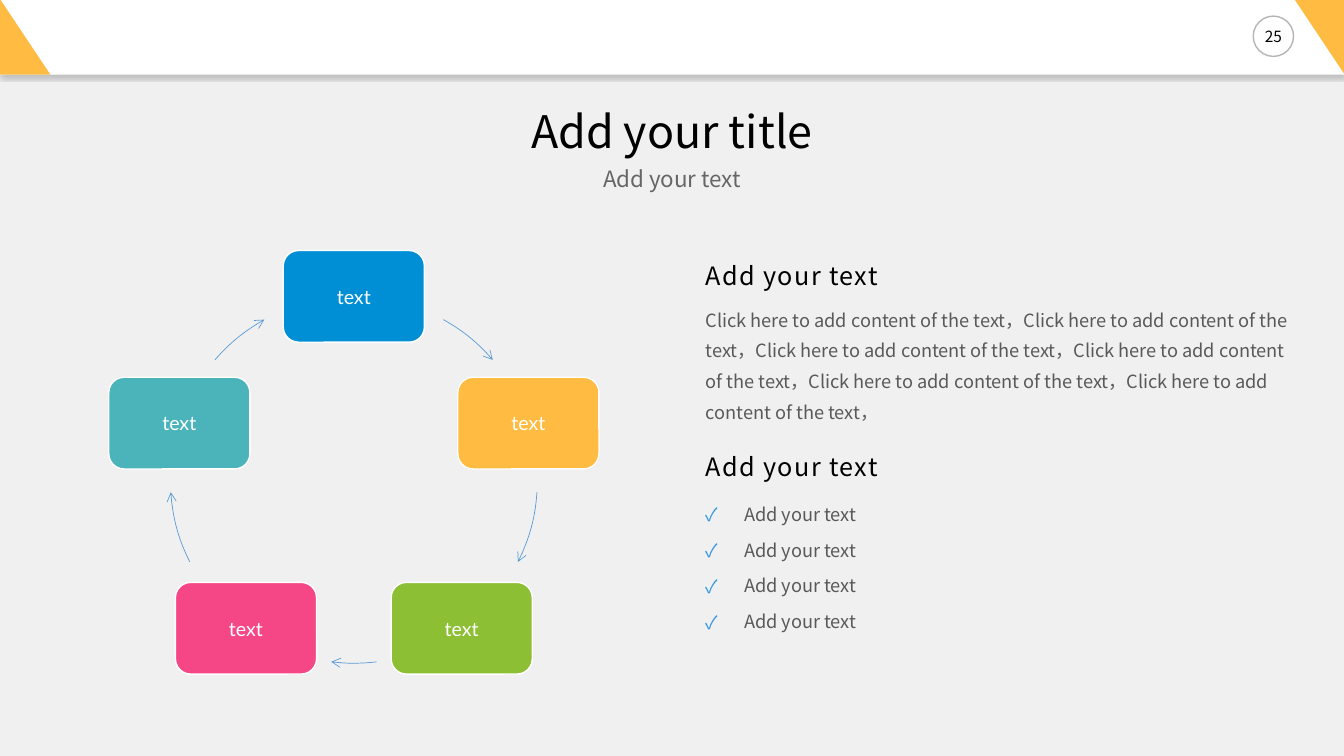
from math import cos, sin, radians
from lxml import etree
from pptx import Presentation
from pptx.dml.color import RGBColor
from pptx.enum.shapes import MSO_SHAPE as SHAPE
from pptx.enum.text import MSO_ANCHOR as ANCHOR, PP_ALIGN as ALIGN
from pptx.oxml.ns import qn
from pptx.util import Inches, Pt

WHITE = RGBColor(0xFF, 0xFF, 0xFF)
BLACK = RGBColor(0, 0, 0)
PAPER = RGBColor(0xF0, 0xF0, 0xF0)
INK = RGBColor(0x0D, 0x0D, 0x0D)
SUBTITLE_GREY = RGBColor(0x66, 0x66, 0x66)
BODY_GREY = RGBColor(0x59, 0x59, 0x59)
AMBER = RGBColor(0xFF, 0xBB, 0x42)
BLUE = RGBColor(0x00, 0x8F, 0xD5)
GREEN = RGBColor(0x8D, 0xBF, 0x34)
PINK = RGBColor(0xF5, 0x47, 0x85)
TEAL = RGBColor(0x4B, 0xB4, 0xBA)
ARROW_BLUE = RGBColor(0x5B, 0x9B, 0xD5)
CHECK_BLUE = RGBColor(0x34, 0x98, 0xDB)
FONT = "Noto Sans CJK JP"
CYCLE_FONT = "Lato"

TITLE = "Add your title"
SUBTITLE = "Add your text"
PAGE = "25"
CYCLE = [("text", BLUE), ("text", AMBER), ("text", GREEN), ("text", PINK), ("text", TEAL)]
ARCS = [(-60.8, -40.8), (3.9, 26.6), (82.9, 97.1), (153.4, 176.1), (220.8, 240.8)]
HEADINGS = [("Add your text", 2.62), ("Add your text", 4.51)]
BODY = "Click here to add content of the text，" * 6
CHECKS = ["Add your text"] * 4

CENTER_X, CENTER_Y, RADIUS = 3.51, 4.76, 1.82
BOX_W, BOX_H = 1.4, 0.91
COLUMN_X, COLUMN_W = 7, 5.83


def add_run(p, text, size, color, font=FONT, spacing=None):
    r = p.add_run()
    r.text = text
    r.font.size = Pt(size)
    r.font.name = font
    r.font.color.rgb = color
    etree.SubElement(r.font._element, qn("a:ea"), typeface=font)
    if spacing:
        r.font._element.set("spc", str(spacing))


def plain_frame(sp, anchor=ANCHOR.TOP):
    tf = sp.text_frame
    tf.word_wrap = True
    tf.margin_left = tf.margin_right = tf.margin_top = tf.margin_bottom = 0
    tf.vertical_anchor = anchor
    return tf


def add_box(s, x, y, w, h):
    return plain_frame(s.shapes.add_textbox(Inches(x), Inches(y), Inches(w), Inches(h)))


def add_preset(s, kind, x, y, w, h, fill, line=None):
    sp = s.shapes.add_shape(kind, Inches(x), Inches(y), Inches(w), Inches(h))
    sp.shadow.inherit = False
    sp.fill.solid()
    sp.fill.fore_color.rgb = fill
    if line is None:
        sp.line.fill.background()
    else:
        sp.line.color.rgb = line
        sp.line.width = Pt(1)
    return sp


def centre_text(sp, text, size, color, font):
    p = plain_frame(sp, ANCHOR.MIDDLE).paragraphs[0]
    p.alignment = ALIGN.CENTER
    add_run(p, text, size, color, font)


def add_header(s):
    bar = add_preset(s, SHAPE.RECTANGLE, -0.01, -0.01, 13.34, 0.75, WHITE)
    effects = bar._element.spPr.find(qn("a:effectLst"))
    shadow = etree.SubElement(effects, qn("a:outerShdw"), blurRad=str(Pt(3)),
                              dist=str(Pt(2)), dir="5400000", algn="t", rotWithShape="0")
    tint = etree.SubElement(shadow, qn("a:srgbClr"), val="000000")
    etree.SubElement(tint, qn("a:alpha"), val="20000")
    badge = add_preset(s, SHAPE.OVAL, 12.43, 0.16, 0.4, 0.4, WHITE, INK)
    ring = badge.line._ln.find(".//" + qn("a:srgbClr"))
    etree.SubElement(ring, qn("a:alpha"), val="30000")
    centre_text(badge, PAGE, 11, BLACK, FONT)
    for x, y, turn in ((0, -0.01, 0), (12.83, -0.02, 180)):
        corner = add_preset(s, SHAPE.RIGHT_TRIANGLE, x, y, 0.5, 0.75, AMBER)
        corner.rotation = turn


def on_circle(angle):
    a = radians(angle)
    return CENTER_X + RADIUS * cos(a), CENTER_Y + RADIUS * sin(a)


def add_arc(s, start, end):
    left, top = Inches(CENTER_X - RADIUS), Inches(CENTER_Y - RADIUS)
    right, bottom = Inches(CENTER_X + RADIUS), Inches(CENTER_Y + RADIUS)
    builder = s.shapes.build_freeform(left, top)
    builder.add_line_segments([(right, top), (right, bottom)], close=False)
    sp = builder.convert_to_shape()
    outline = sp._element.find(".//" + qn("a:path"))
    for step in list(outline):
        outline.remove(step)
    x, y = on_circle(start)
    move = etree.SubElement(outline, qn("a:moveTo"))
    etree.SubElement(move, qn("a:pt"), x=str(Inches(x) - left), y=str(Inches(y) - top))
    radius = str(Inches(RADIUS))
    etree.SubElement(outline, qn("a:arcTo"), wR=radius, hR=radius,
                     stAng=str(round(start % 360 * 60000)),
                     swAng=str(round((end - start) * 60000)))
    sp.shadow.inherit = False
    sp.fill.background()
    sp.line.color.rgb = ARROW_BLUE
    sp.line.width = Pt(0.5)
    etree.SubElement(sp.line._ln, qn("a:tailEnd"), type="arrow")


def add_cycle(s):
    for i, ((label, color), arc) in enumerate(zip(CYCLE, ARCS)):
        x, y = on_circle(-90 + i * 360 / len(CYCLE))
        sp = add_preset(s, SHAPE.ROUNDED_RECTANGLE, x - BOX_W / 2, y - BOX_H / 2,
                        BOX_W, BOX_H, color, WHITE)
        centre_text(sp, label, 14, WHITE, CYCLE_FONT)
        add_arc(s, *arc)


def add_titles(s):
    title = s.shapes.title
    title.left, title.top = Inches(0.5), Inches(1.09)
    title.width, title.height = Inches(12.33), Inches(0.54)
    subtitle = add_box(s, 0.5, 1.67, 12.33, 0.27)
    for tf, text, size, color in ((plain_frame(title), TITLE, 32, BLACK),
                                  (subtitle, SUBTITLE, 16, SUBTITLE_GREY)):
        p = tf.paragraphs[0]
        p.alignment = ALIGN.CENTER
        p.line_spacing = 0.9
        add_run(p, text, size, color)


def add_column(s):
    for text, y in HEADINGS:
        p = add_box(s, COLUMN_X, y, COLUMN_W, 0.39).paragraphs[0]
        p.line_spacing = 0.9
        add_run(p, text, 18, BLACK, spacing=100)
    p = add_box(s, COLUMN_X, 2.98, COLUMN_W, 1.53).paragraphs[0]
    p.line_spacing = 1.4
    add_run(p, BODY, 13, BODY_GREY)
    tf = add_box(s, COLUMN_X, 4.99, COLUMN_W, 1.53)
    for i, text in enumerate(CHECKS):
        p = tf.add_paragraph() if i else tf.paragraphs[0]
        p.space_before = Pt(10)
        pPr = p._p.get_or_add_pPr()
        pPr.set("marL", str(Inches(0.38)))
        pPr.set("indent", str(-Inches(0.38)))
        color = etree.SubElement(pPr, qn("a:buClr"))
        etree.SubElement(color, qn("a:srgbClr"), val=str(CHECK_BLUE))
        etree.SubElement(pPr, qn("a:buFont"), typeface=FONT)
        etree.SubElement(pPr, qn("a:buChar"), char="✓")
        add_run(p, text, 13, BODY_GREY)


def main():
    prs = Presentation()
    prs.slide_width, prs.slide_height = Inches(13.33), Inches(7.5)
    s = prs.slides.add_slide(prs.slide_layouts[5])
    s.background.fill.solid()
    s.background.fill.fore_color.rgb = PAPER
    add_header(s)
    add_cycle(s)
    add_titles(s)
    add_column(s)
    prs.save("out.pptx")


if __name__ == "__main__":
    main()
